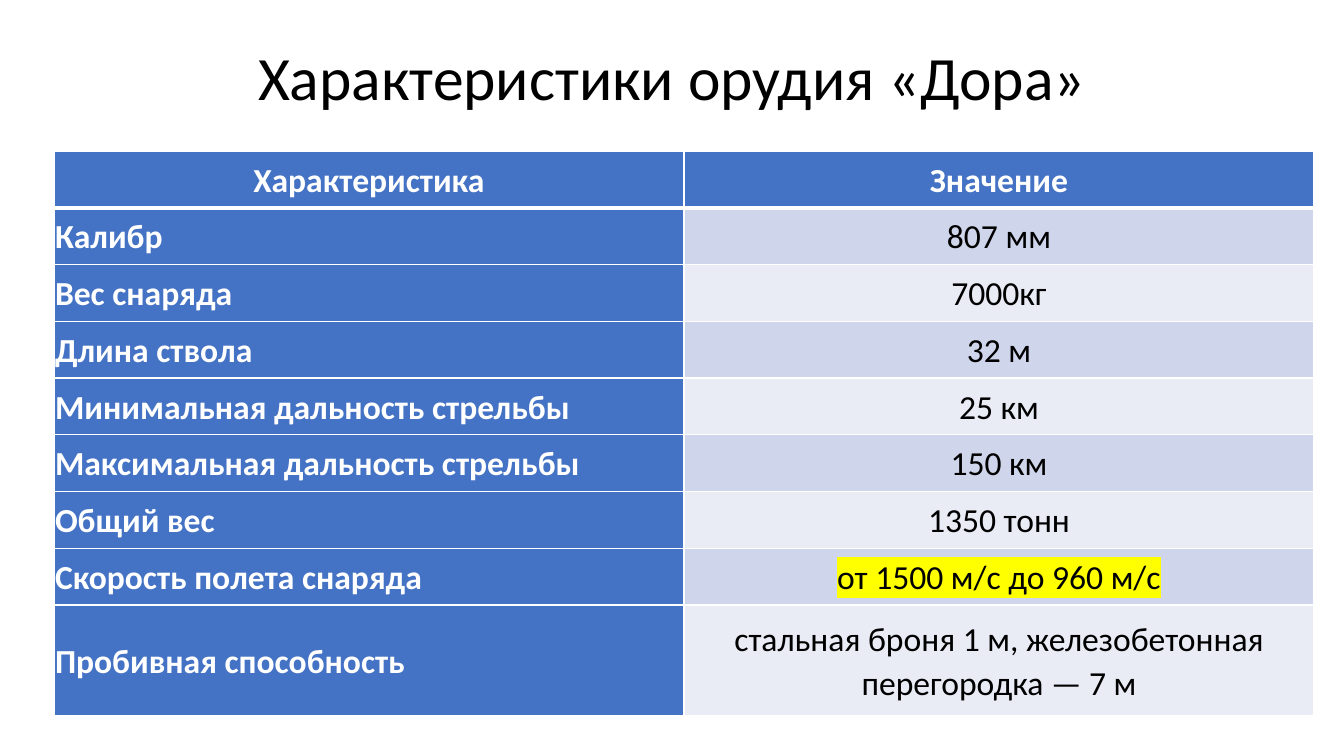
from lxml import etree
from pptx import Presentation, util as u
from pptx.dml.color import RGBColor
from pptx.enum import text
from pptx.oxml import ns

# Content
TITLE = "Характеристики орудия «Дора»"
HEADER = ("Характеристика", "Значение")
SPECS = [
    ("Калибр", "807 мм"),
    ("Вес снаряда", "7000кг"),
    ("Длина ствола", "32 м"),
    ("Минимальная дальность стрельбы", "25 км"),
    ("Максимальная дальность стрельбы", "150 км"),
    ("Общий вес", "1350 тонн"),
    ("Скорость полета снаряда", "от 1500 м/с до 960 м/с"),
    ("Пробивная способность", "стальная броня 1 м, железобетонная перегородка — 7 м"),
]
HIGHLIGHTED = "от 1500 м/с до 960 м/с"

# Style
FONT = "Calibri"
COLORS = {
    "black": "000000",
    "white": "FFFFFF",
    "blue": "4472C4",
    "band_dark": "CFD5EA",
    "band_light": "E9EBF5",
    "marker": "FFFF00",
}

# Geometry in px
SLIDE = (1344, 756)
TITLE_BOX = (93, 40, 1159, 82)
TABLE_LEFT, TABLE_TOP, TABLE_WIDTH = 54, 151, 1260
LAST_ROW_TOP, TABLE_BOTTOM = 605, 716
CELL_INSET = 1


def px(length):
    return u.Emu(round(length * 914400 / 100.8))


def write(paragraph, words, size, color, bold, align, spacing):
    paragraph.alignment = align
    paragraph.line_spacing = spacing
    font = paragraph.font
    font.name, font.size, font.bold = FONT, u.Pt(size), bold
    font.color.rgb = RGBColor.from_string(COLORS[color])
    run = paragraph.add_run()
    run.text = words
    return run


def add_color(parent, tag, color):
    holder = etree.SubElement(parent, ns.qn(tag))
    etree.SubElement(holder, ns.qn("a:srgbClr"), val=COLORS[color])


def set_borders(cell, widths):
    properties = cell._tc.get_or_add_tcPr()
    for position, (side, points) in enumerate(widths.items()):
        line = etree.Element(ns.qn(f"a:ln{side}"), w=str(u.Pt(points)))
        add_color(line, "a:solidFill", "white")
        properties.insert(position, line)


presentation = Presentation()
presentation.slide_width, presentation.slide_height = map(px, SLIDE)
slide = presentation.slides.add_slide(presentation.slide_layouts[6])

# Title
title = slide.shapes.add_textbox(*map(px, TITLE_BOX)).text_frame
title.word_wrap = True
title.vertical_anchor = text.MSO_ANCHOR.MIDDLE
write(title.paragraphs[0], TITLE, 44, "black", False, text.PP_ALIGN.CENTER, 0.9)

# Table grid: equal rows, then a taller last one
rows = [HEADER, *SPECS]
row_height = (LAST_ROW_TOP - TABLE_TOP) / len(SPECS)
table = slide.shapes.add_table(
    len(rows), len(HEADER), px(TABLE_LEFT), px(TABLE_TOP),
    px(TABLE_WIDTH), px(TABLE_BOTTOM - TABLE_TOP)).table
for row in table.rows:
    row.height = px(row_height)
table.rows[len(SPECS)].height = px(TABLE_BOTTOM - LAST_ROW_TOP)

# Cells
for r, row in enumerate(rows):
    for c, words in enumerate(row):
        cell = table.cell(r, c)
        is_label = r == 0 or c == 0
        band = "band_dark" if r % 2 else "band_light"
        cell.fill.solid()
        cell.fill.fore_color.rgb = RGBColor.from_string(COLORS["blue" if is_label else band])
        cell.vertical_anchor = text.MSO_ANCHOR.MIDDLE
        cell.margin_left = cell.margin_right = px(CELL_INSET)
        cell.margin_top = cell.margin_bottom = px(CELL_INSET)
        centred = r == 0 or c == 1
        run = write(
            cell.text_frame.paragraphs[0], words, 24, "white" if is_label else "black", is_label,
            text.PP_ALIGN.CENTER if centred else text.PP_ALIGN.LEFT, 1.07)
        if words == HIGHLIGHTED:
            add_color(run._r.get_or_add_rPr(), "a:highlight", "marker")
        set_borders(cell, {"L": 1, "R": 1, "T": 3 if r == 1 else 1, "B": 3 if r == 0 else 1})

presentation.save("out.pptx")
